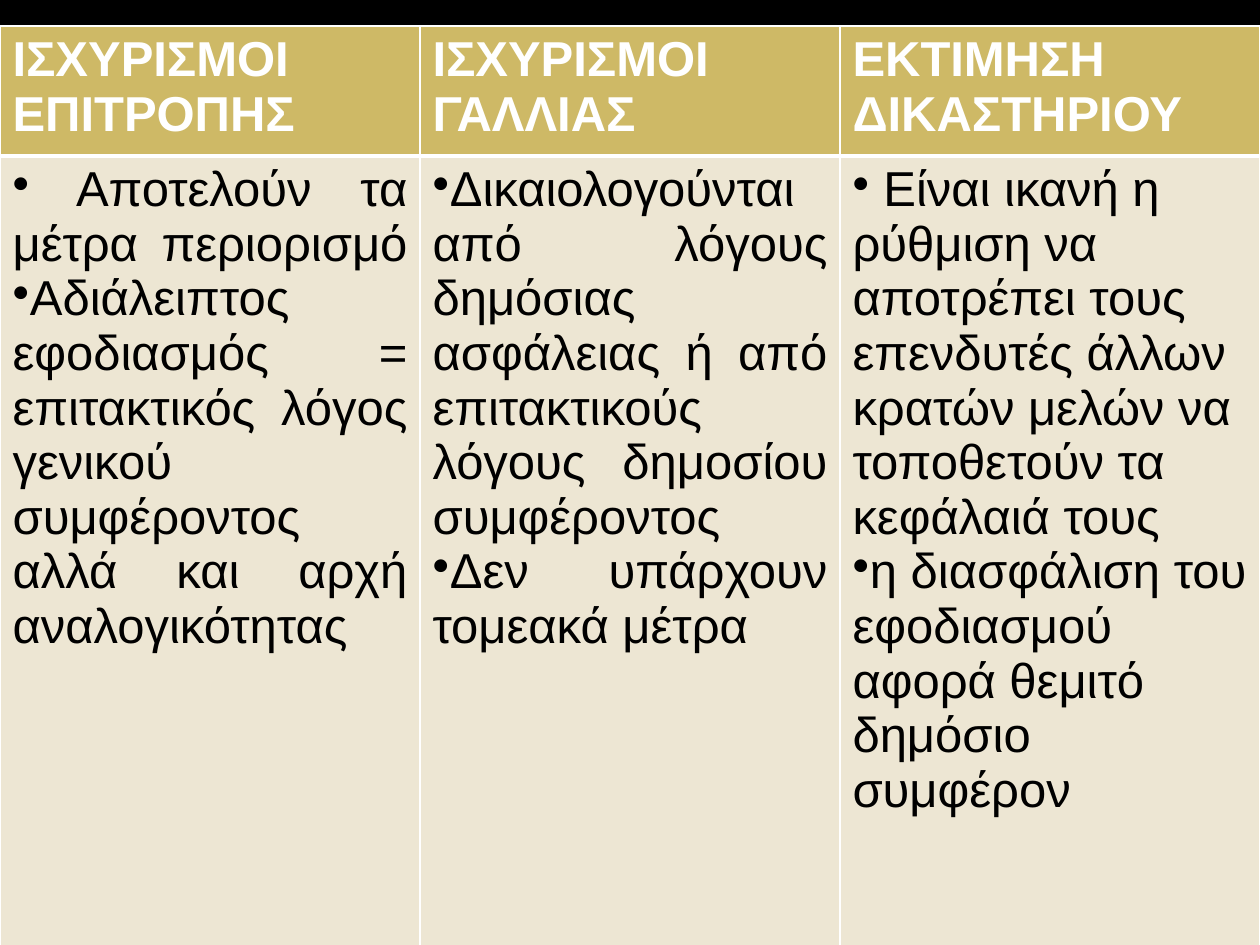
from lxml.etree import SubElement
from pptx import Presentation
from pptx.dml.color import RGBColor
from pptx.enum.text import PP_ALIGN as Align
from pptx.oxml.ns import qn
from pptx.util import Emu, Pt

COLORS = {"bg": "000000", "header": "CEB966", "body": "EDE6D3",
          "line": "FFFFFF", "header_text": "FFFFFF", "body_text": "000000"}
FONT, SIZE = "Arial", 28
HEADER_H = 130

# heading, body alignment, bullet points
COLUMNS = [
    ("ΙΣΧΥΡΙΣΜΟΙ ΕΠΙΤΡΟΠΗΣ", Align.JUSTIFY, [
        " Αποτελούν τα μέτρα περιορισμό ",
        "Αδιάλειπτος εφοδιασμός = επιτακτικός λόγος γενικού συμφέροντος "
        "αλλά και αρχή αναλογικότητας"]),
    ("ΙΣΧΥΡΙΣΜΟΙ ΓΑΛΛΙΑΣ", Align.JUSTIFY, [
        "Δικαιολογούνται από λόγους δημόσιας ασφάλειας ή από επιτακτικούς "
        "λόγους δημοσίου συμφέροντος ",
        "Δεν υπάρχουν τομεακά μέτρα "]),
    ("ΕΚΤΙΜΗΣΗ ΔΙΚΑΣΤΗΡΙΟΥ", Align.LEFT, [
        " Είναι ικανή η ρύθμιση να αποτρέπει τους επενδυτές άλλων κρατών "
        "μελών να τοποθετούν τα κεφάλαιά τους",
        "η διασφάλιση του εφοδιασμού αφορά θεμιτό δημόσιο συμφέρον"]),
]


def px(n):
    return Emu(round(n * 914400 / 126))


def rgb(name):
    return RGBColor.from_string(COLORS[name])


def set_borders(cell, top, bottom):
    """Draw the four cell borders; widths in points, sides always 1."""
    tcPr = cell._tc.get_or_add_tcPr()
    for side, width in (("L", 1), ("R", 1), ("T", top), ("B", bottom)):
        ln = SubElement(tcPr, qn(f"a:ln{side}"), w=str(Pt(width)))
        fill = SubElement(ln, qn("a:solidFill"))
        SubElement(fill, qn("a:srgbClr"), val=COLORS["line"])


def fill_cell(cell, kind, texts, align, bullets):
    set_borders(cell, *((3, 1) if bullets else (1, 3)))
    cell.fill.solid()
    cell.fill.fore_color.rgb = rgb(kind)
    tf = cell.text_frame
    for i, text in enumerate(texts):
        p = tf.paragraphs[0] if i == 0 else tf.add_paragraph()
        p.add_run().text = text
        p.alignment = align
        if bullets:
            SubElement(p._p.get_or_add_pPr(), qn("a:buChar"), char="•")
        p.font.name, p.font.size = FONT, Pt(SIZE)
        p.font.bold = not bullets
        p.font.color.rgb = rgb(f"{kind}_text")


def add_claims_table(slide, x, y, w, h):
    table = slide.shapes.add_table(2, len(COLUMNS), px(x), px(y), px(w), px(h)).table
    table.rows[0].height = px(HEADER_H)
    table.rows[1].height = px(h - HEADER_H)
    for i, (heading, align, points) in enumerate(COLUMNS):
        table.columns[i].width = px(w // len(COLUMNS))
        fill_cell(table.cell(0, i), "header", [heading], Align.LEFT, False)
        fill_cell(table.cell(1, i), "body", points, align, True)


def main():
    prs = Presentation()
    prs.slide_width, prs.slide_height = px(1260), px(945)
    slide = prs.slides.add_slide(prs.slide_layouts[6])
    slide.background.fill.solid()
    slide.background.fill.fore_color.rgb = rgb("bg")
    add_claims_table(slide, 0, 26, 1260, 960)
    prs.save("out.pptx")


if __name__ == "__main__":
    main()
